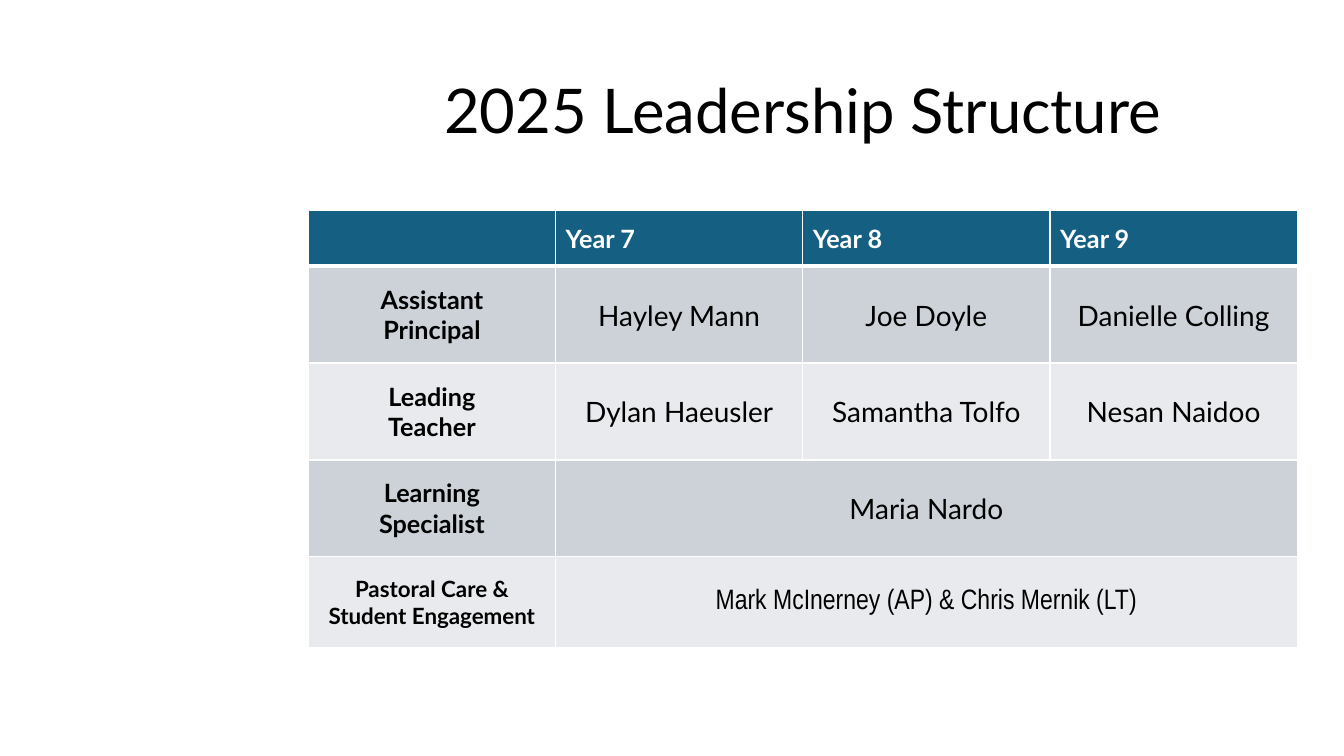
from lxml.etree import SubElement
from pptx import Presentation
from pptx.dml.color import RGBColor
from pptx.enum.text import MSO_ANCHOR as ANCHOR, PP_ALIGN as ALIGN
from pptx.oxml.ns import qn
from pptx.util import Cm, Pt

COLORS = {"header": "156082", "odd": "CCD2D8", "even": "E8EAED",
          "white": "FFFFFF", "black": "000000"}
ROW_HEIGHTS = [1.4, 2.44, 2.44, 2.44, 2.28]
COL_WIDTH = 6.23
YEARS = ["Year 7", "Year 8", "Year 9"]
ROLES = [
    ("Assistant\nPrincipal", 18, ["Hayley Mann", "Joe Doyle", "Danielle Colling"], "Lato"),
    ("Leading\nTeacher", 18, ["Dylan Haeusler", "Samantha Tolfo", "Nesan Naidoo"], "Lato"),
    ("Learning\nSpecialist", 18, ["Maria Nardo"], "Lato"),
    ("Pastoral Care & Student Engagement", 16,
     ["Mark McInerney (AP) & Chris Mernik (LT)"], "Arial Narrow"),
]


def rgb(name):
    """Return the named colour."""
    return RGBColor.from_string(COLORS[name])


def write(tf, text, size, color="black", bold=False, align=ALIGN.CENTER, font="Lato"):
    """Fill a text frame, one paragraph per line of text."""
    tf.text = text
    for p in tf.paragraphs:
        p.alignment = align
        p.font.size = Pt(size)
        p.font.name = font
        p.font.bold = bold
        p.font.color.rgb = rgb(color)


def add_title(s, text):
    """Add the slide title."""
    tf = s.shapes.add_textbox(Cm(6.6), Cm(1.02), Cm(27.27), Cm(3.68)).text_frame
    tf.word_wrap = True
    tf.vertical_anchor = ANCHOR.MIDDLE
    write(tf, text, 44)
    tf.paragraphs[0].line_spacing = 0.9


def style_cell(cell, row):
    """Give a cell its white borders, fill and anchor."""
    widths = {"L": 1, "R": 1, "T": 3 if row == 1 else 1, "B": 3 if row == 0 else 1}
    tcPr = cell._tc.get_or_add_tcPr()
    for side, width in widths.items():
        ln = SubElement(tcPr, qn(f"a:ln{side}"), w=str(Pt(width)))
        SubElement(SubElement(ln, qn("a:solidFill")), qn("a:srgbClr"), val=COLORS["white"])
    cell.fill.solid()
    cell.fill.fore_color.rgb = rgb("header" if row == 0 else "odd" if row % 2 else "even")
    cell.vertical_anchor = ANCHOR.MIDDLE


def add_name(cell, name, font):
    """Write a leader's name in a cell with tight margins."""
    cell.margin_left = cell.margin_right = cell.margin_top = Cm(0.03)
    cell.margin_bottom = 0
    write(cell.text_frame, name, 20, font=font)


def add_leaders(s):
    """Add the table of roles and year levels."""
    n_rows, n_cols = len(ROW_HEIGHTS), len(YEARS) + 1
    table = s.shapes.add_table(n_rows, n_cols, Cm(7.77), Cm(5.31),
                               Cm(COL_WIDTH * n_cols), Cm(sum(ROW_HEIGHTS))).table
    for col in table.columns:
        col.width = Cm(COL_WIDTH)
    for i, height in enumerate(ROW_HEIGHTS):
        table.rows[i].height = Cm(height)
        for cell in table.rows[i].cells:
            style_cell(cell, i)
    for j, year in enumerate(YEARS, 1):
        write(table.cell(0, j).text_frame, year, 18, "white", True, ALIGN.LEFT)
    for i, (role, size, names, font) in enumerate(ROLES, 1):
        write(table.cell(i, 0).text_frame, role, size, bold=True)
        if len(names) == 1:
            table.cell(i, 1).merge(table.cell(i, n_cols - 1))
        for j, name in enumerate(names, 1):
            add_name(table.cell(i, j), name, font)


def main():
    """Build the leadership slide."""
    prs = Presentation()
    prs.slide_width, prs.slide_height = Cm(33.87), Cm(19.05)
    s = prs.slides.add_slide(prs.slide_layouts[6])
    add_title(s, "2025 Leadership Structure")
    add_leaders(s)
    prs.save("out.pptx")


if __name__ == "__main__":
    main()
